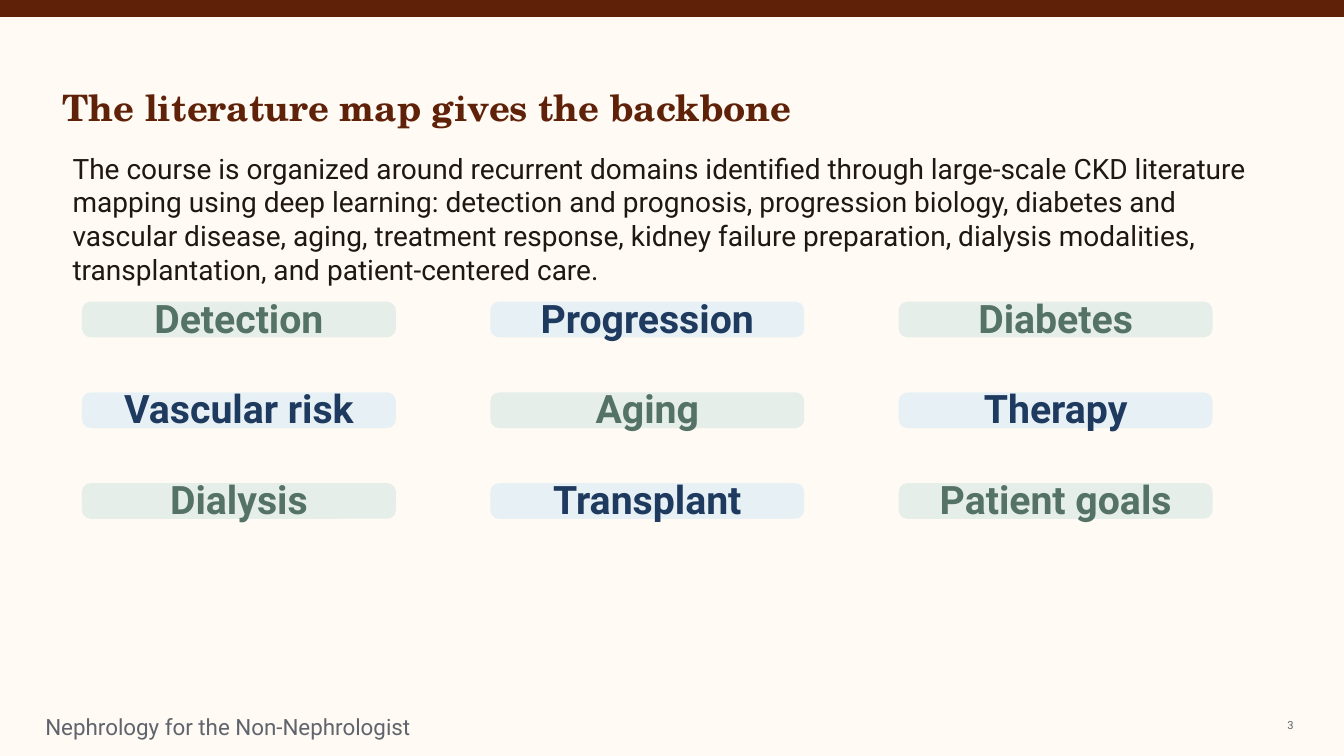
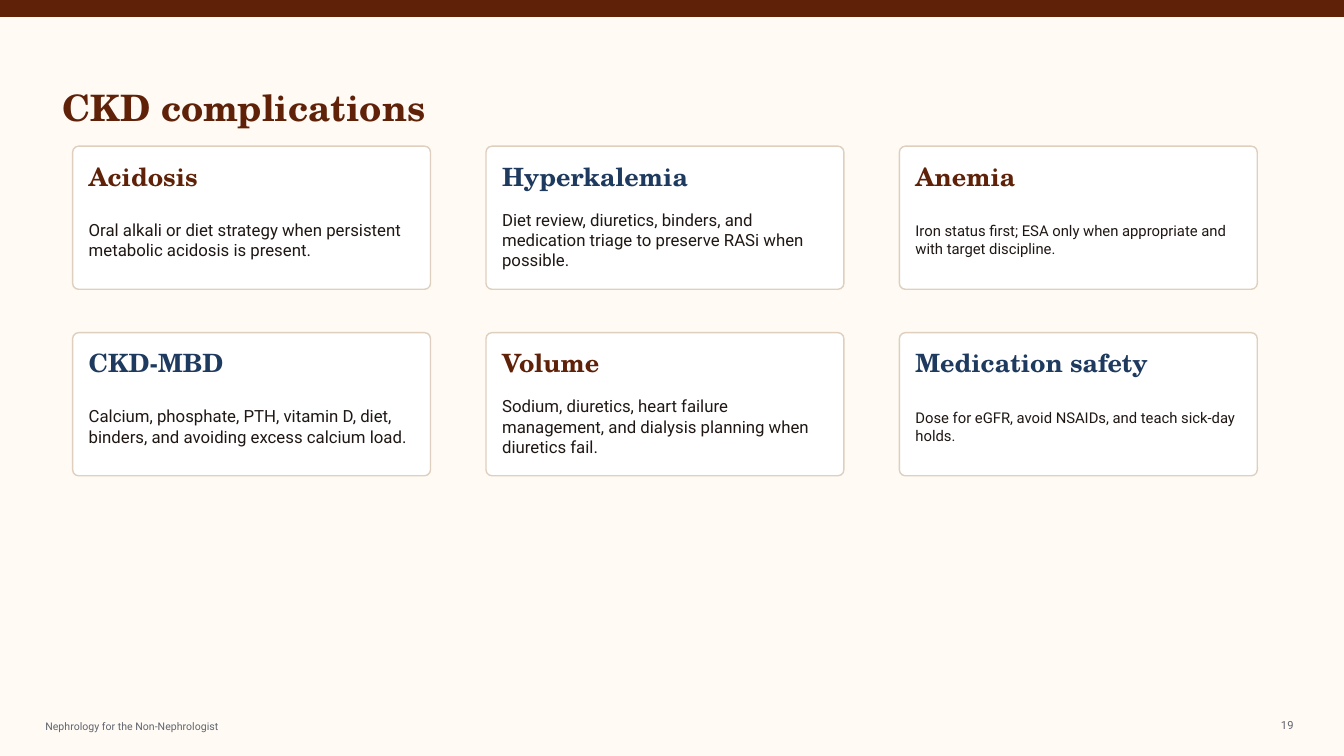
from dataclasses import dataclass

from pptx import Presentation
from pptx.dml.color import RGBColor
from pptx.enum.shapes import MSO_SHAPE
from pptx.enum.text import MSO_ANCHOR, PP_ALIGN
from pptx.util import Inches, Pt

RECTANGLE, ROUNDED = MSO_SHAPE.RECTANGLE, MSO_SHAPE.ROUNDED_RECTANGLE
TOP, MIDDLE = MSO_ANCHOR.TOP, MSO_ANCHOR.MIDDLE
LEFT, CENTER, RIGHT = PP_ALIGN.LEFT, PP_ALIGN.CENTER, PP_ALIGN.RIGHT

SLIDE_WIDTH, SLIDE_HEIGHT = 13.33, 7.5
COLUMNS = 3
CORNER_RADIUS = {"card": 0.06, "tag": 0.08}


@dataclass(frozen=True)
class Theme:
    heading_font: str = "TeX Gyre Schola"
    body_font: str = "Roboto"

    paper: str = "FFFAF4"
    white: str = "FFFFFF"
    ink: str = "1F1714"
    muted: str = "5F646D"
    maroon: str = "5F2209"
    navy: str = "1F3A5F"
    green: str = "557267"
    pale_green: str = "E6EEE9"
    pale_blue: str = "E7F1F5"
    card_edge: str = "DECFBE"

    title_size: float = 26
    intro_size: float = 20
    tag_size: float = 28
    card_heading_size: float = 18
    card_body_size: float = 12
    card_small_size: float = 10.6
    footer_size: float = 7.5
    footer_large_size: float = 16
    page_number_size: float = 8


def grid_positions(count, left, top, column_step, row_step):
    """Yield the left and top of each cell, row by row."""
    for index in range(count):
        row, column = divmod(index, COLUMNS)
        yield left + column * column_step, top + row * row_step


class Deck:
    def __init__(self, theme):
        self.theme = theme
        self.slide = None
        self.presentation = Presentation()
        self.presentation.slide_width = Inches(SLIDE_WIDTH)
        self.presentation.slide_height = Inches(SLIDE_HEIGHT)
        background = self.presentation.slide_master.background.fill
        background.solid()
        background.fore_color.rgb = RGBColor.from_string(theme.paper)

    def start_slide(self, title, page_number, footer_size):
        theme = self.theme
        blank_layout = self.presentation.slide_layouts[6]
        self.slide = self.presentation.slides.add_slide(blank_layout)
        self.panel(RECTANGLE, 0, 0, SLIDE_WIDTH, 0.16, theme.maroon, theme.maroon)
        self.text(title, 0.62, 0.75, 11.4, 0.62, theme.title_size, theme.maroon,
                  font=theme.heading_font, bold=True)
        self.text("Nephrology for the Non-Nephrologist", 0.45, 7.12, 4.3, 0.18,
                  footer_size, theme.muted)
        self.text(str(page_number), 12.28, 7.1, 0.55, 0.18,
                  theme.page_number_size, theme.muted, align=RIGHT)

    def panel(self, kind, left, top, width, height, fill, edge, radius=None):
        shape = self.slide.shapes.add_shape(
            kind, Inches(left), Inches(top), Inches(width), Inches(height))
        shape.shadow.inherit = False
        shape.fill.solid()
        shape.fill.fore_color.rgb = RGBColor.from_string(fill)
        shape.line.color.rgb = RGBColor.from_string(edge)
        shape.line.width = Pt(1)
        if radius:
            shape.adjustments[0] = radius / min(width, height)
        return shape

    def text(self, words, left, top, width, height, size, color, **style):
        box = self.slide.shapes.add_textbox(
            Inches(left), Inches(top), Inches(width), Inches(height))
        self.fill_frame(box.text_frame, words, size, color, **style)

    def fill_frame(self, frame, words, size, color, font=None, bold=False,
                   align=LEFT, anchor=MIDDLE):
        frame.word_wrap = True
        frame.vertical_anchor = anchor
        frame.margin_left = frame.margin_right = 0
        frame.margin_top = frame.margin_bottom = 0
        paragraph = frame.paragraphs[0]
        paragraph.text = words
        paragraph.alignment = align
        paragraph.font.name = font or self.theme.body_font
        paragraph.font.size = Pt(size)
        paragraph.font.bold = bold
        paragraph.font.color.rgb = RGBColor.from_string(color)

    def tag(self, label, left, top, fill, color):
        tag = self.panel(ROUNDED, left, top, 3.1, 0.34, fill, fill,
                         CORNER_RADIUS["tag"])
        self.fill_frame(tag.text_frame, label, self.theme.tag_size, color,
                        bold=True, align=CENTER)
        tag.text_frame.margin_bottom = Inches(0.04)

    def card(self, heading, body, left, top, heading_color, body_size):
        theme = self.theme
        self.panel(ROUNDED, left, top, 3.55, 1.42, theme.white, theme.card_edge,
                   CORNER_RADIUS["card"])
        self.text(heading, left + 0.16, top + 0.14, 3.23, 0.32,
                  theme.card_heading_size, heading_color,
                  font=theme.heading_font, bold=True)
        self.text(body, left + 0.16, top + 0.56, 3.23, 0.74, body_size, theme.ink)


def add_literature_map(deck):
    theme = deck.theme
    deck.start_slide("The literature map gives the backbone", 3,
                     theme.footer_large_size)
    deck.text(
        "The course is organized around recurrent domains identified through "
        "large-scale CKD literature mapping using deep learning: detection and "
        "prognosis, progression biology, diabetes and vascular disease, aging, "
        "treatment response, kidney failure preparation, dialysis modalities, "
        "transplantation, and patient-centered care.",
        0.72, 1.5, 11.8, 0.95, theme.intro_size, theme.ink, anchor=TOP)

    domains = ["Detection", "Progression", "Diabetes",
               "Vascular risk", "Aging", "Therapy",
               "Dialysis", "Transplant", "Patient goals"]
    tag_colors = [(theme.pale_green, theme.green), (theme.pale_blue, theme.navy)]
    positions = grid_positions(len(domains), 0.82, 3, 4.05, 0.9)
    for index, (domain, (left, top)) in enumerate(zip(domains, positions)):
        deck.tag(domain, left, top, *tag_colors[index % 2])


def add_complications(deck):
    theme = deck.theme
    deck.start_slide("CKD complications", 19, theme.footer_size)
    complications = [
        ("Acidosis", "Oral alkali or diet strategy when persistent metabolic "
                     "acidosis is present."),
        ("Hyperkalemia", "Diet review, diuretics, binders, and medication triage "
                         "to preserve RASi when possible."),
        ("Anemia", "Iron status first; ESA only when appropriate and with target "
                   "discipline."),
        ("CKD-MBD", "Calcium, phosphate, PTH, vitamin D, diet, binders, and "
                    "avoiding excess calcium load."),
        ("Volume", "Sodium, diuretics, heart failure management, and dialysis "
                   "planning when diuretics fail."),
        ("Medication safety", "Dose for eGFR, avoid NSAIDs, and teach sick-day "
                              "holds."),
    ]
    heading_colors = [theme.maroon, theme.navy]
    column_body_sizes = [theme.card_body_size, theme.card_body_size,
                         theme.card_small_size]
    positions = grid_positions(len(complications), 0.72, 1.45, 4.1, 1.85)
    for index, ((heading, body), (left, top)) in enumerate(
            zip(complications, positions)):
        deck.card(heading, body, left, top, heading_colors[index % 2],
                  column_body_sizes[index % COLUMNS])


def main():
    deck = Deck(Theme())
    add_literature_map(deck)
    add_complications(deck)
    deck.presentation.save("out.pptx")


if __name__ == "__main__":
    main()
